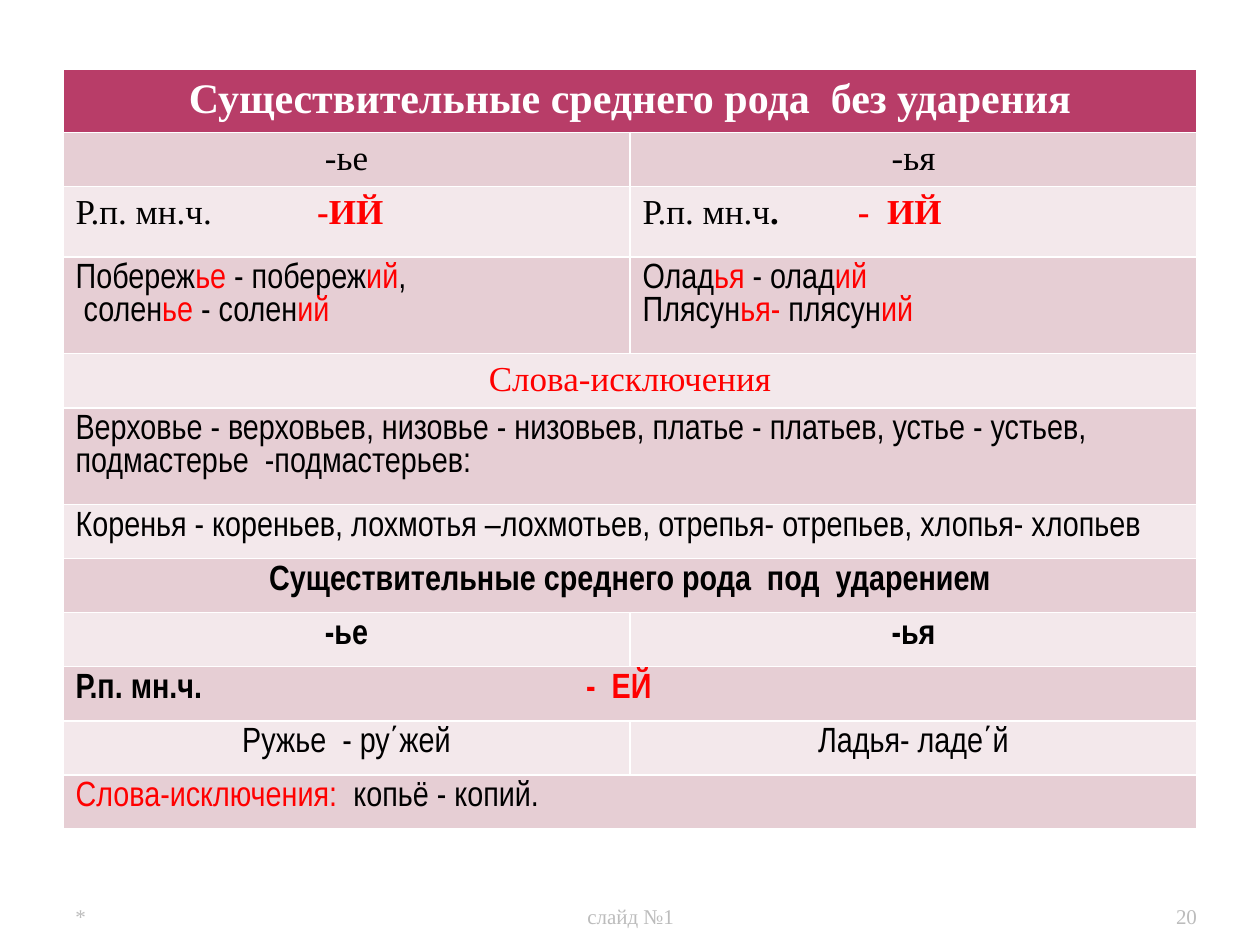
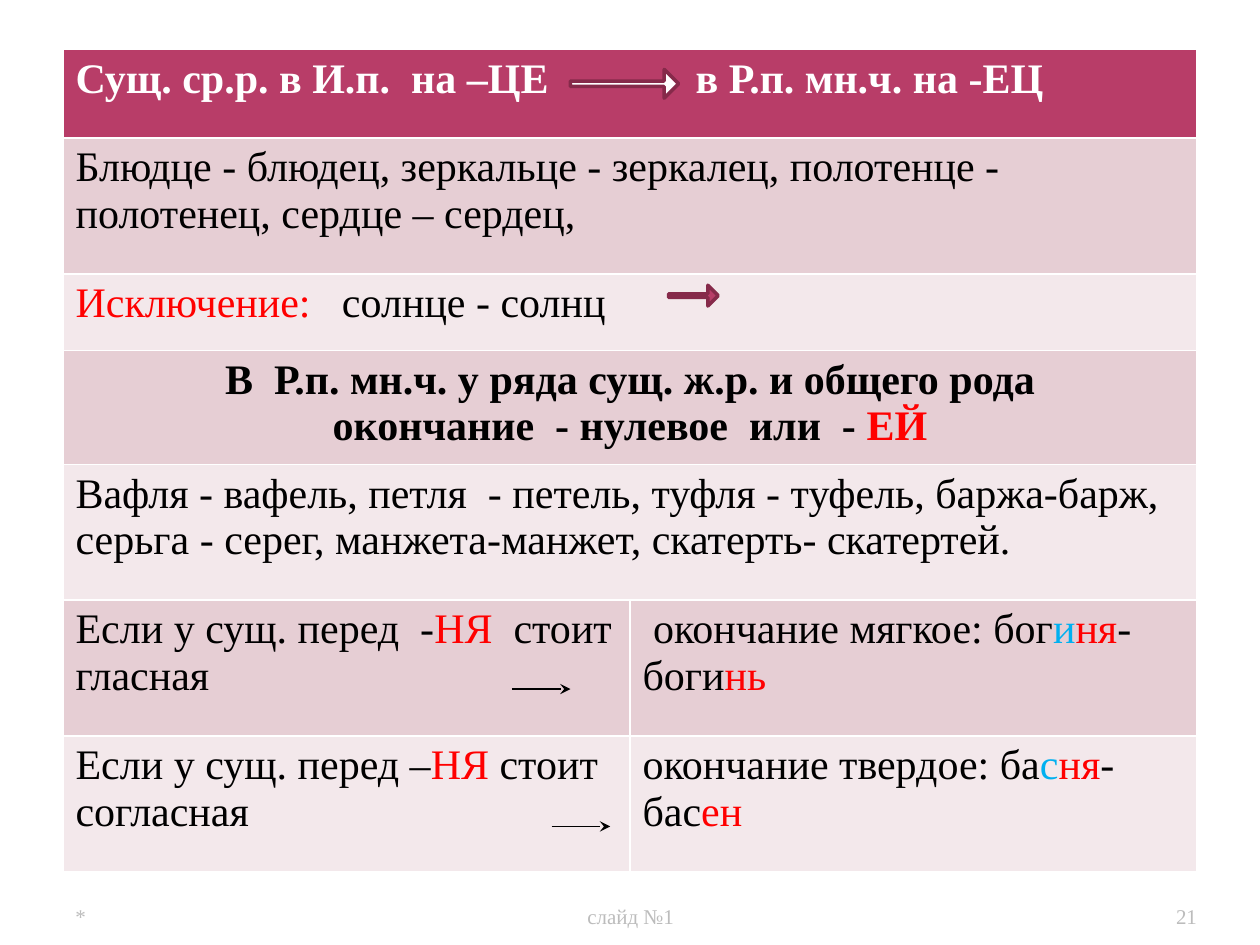
"""Build two slides of tables on Russian genitive plural endings."""
from dataclasses import dataclass

import pptx
import pptx.dml.color
import pptx.enum.shapes
import pptx.enum.text
import pptx.util
from lxml import etree
from pptx.oxml.ns import qn

Cm = pptx.util.Cm
Pt = pptx.util.Pt
RGBColor = pptx.dml.color.RGBColor
ALIGN = pptx.enum.text.PP_ALIGN

WHITE = RGBColor(0xFF, 0xFF, 0xFF)
BLACK = RGBColor(0, 0, 0)
RED = RGBColor(0xFF, 0, 0)
BLUE = RGBColor(0, 0xB0, 0xF0)
BERRY = RGBColor(0xB8, 0x3D, 0x68)
DARK_BERRY = RGBColor(0x86, 0x2A, 0x4A)
ROSE = RGBColor(0xE6, 0xCE, 0xD4)
PALE_ROSE = RGBColor(0xF3, 0xE8, 0xEB)
GRAY = RGBColor(0xBC, 0xBC, 0xBC)

SERIF = "Times New Roman"
NARROW = "Arial Narrow"
MARGIN = 1.27
COLUMN_WIDTH = 11.43

MARKS = {"*": (RED, False), "!": (RED, True), "~": (BLUE, False), "+": (BLACK, True)}


@dataclass
class Row:
    """Hold one table row; a lone cell spans both columns, and | splits marked spans."""
    height: float
    cells: tuple
    font: str = SERIF
    bold: bool = False
    align: int = ALIGN.LEFT
    tabs: tuple = ()


NEUTER_ROWS = [
    Row(1.27, ("Существительные среднего рода  без ударения",), bold=True, align=ALIGN.CENTER),
    Row(1.09, ("-ье", "-ья"), align=ALIGN.CENTER),
    Row(1.42, ("Р.п. мн.ч.\t|!-ИЙ", "Р.п. мн.ч|+.\t|!-  ИЙ"), tabs=(4.87, 4.34)),
    Row(1.95, ("Побереж|*ье| - побереж|*ий|,\n солен|*ье| - солен|*ий",
               "Олад|*ья |- олад|*ий\nПлясун|*ья-| плясун|*ий"), NARROW),
    Row(1.09, ("*Слова-исключения",), align=ALIGN.CENTER),
    Row(1.95, ("Верховье - верховьев, низовье - низовьев, платье - платьев, "
               "устье - устьев, подмастерье  -подмастерьев:",), NARROW),
    Row(1.09, ("Коренья - кореньев, лохмотья –лохмотьев, отрепья- отрепьев, "
               "хлопья- хлопьев",), NARROW),
    Row(1.09, ("Существительные среднего рода  под  ударением",), NARROW, True, ALIGN.CENTER),
    Row(1.09, ("-ье", "-ья"), NARROW, True, ALIGN.CENTER),
    Row(1.09, ("Р.п. мн.ч.\t|!-  ЕЙ",), NARROW, True, tabs=(10.29,)),
    Row(1.09, ("Ружье  - ру΄жей", "Ладья- ладе΄й"), NARROW, align=ALIGN.CENTER),
    Row(1.09, ("*Слова-исключения:|  копьё - копий.",), NARROW),
]

ENDING_ROWS = [
    Row(1.78, ("Сущ. ср.р. в И.п.  на –ЦЕ\tв Р.п. мн.ч. на -ЕЦ",), bold=True, tabs=(12.5,)),
    Row(2.74, ("Блюдце - блюдец, зеркальце - зеркалец, полотенце - полотенец, "
               "сердце – сердец,",)),
    Row(1.55, ("*Исключение:\t|солнце - солнц",), tabs=(5.37,)),
    Row(2.29, ("В  Р.п. мн.ч. у ряда сущ. ж.р. и общего рода\n"
               "окончание  - нулевое  или  - |!ЕЙ",), bold=True, align=ALIGN.CENTER),
    Row(2.74, ("Вафля - вафель, петля  - петель, туфля - туфель, баржа-барж, "
               "серьга - серег, манжета-манжет, скатерть- скатертей.",)),
    Row(2.74, ("Если у сущ. перед  -|*НЯ|  стоит гласная",
               " окончание мягкое: бог|~и|*ня|-боги|*нь")),
    Row(2.74, ("Если у сущ. перед –|*НЯ| стоит согласная",
               "окончание твердое: ба|~с|*ня|-бас|*ен")),
]


def format_span(span, font, size, color, bold=False):
    """Apply typeface, size, colour and weight to a run."""
    span.font.name = font
    span.font.size = Pt(size)
    span.font.color.rgb = color
    span.font.bold = bold


def add_tab_stop(para, position):
    """Add one left tab stop, in centimetres."""
    stops = etree.SubElement(para._p.get_or_add_pPr(), qn("a:tabLst"))
    etree.SubElement(stops, qn("a:tab"), pos=str(Cm(position)), algn="l")


def fill_cell(cell, text, row, index, size, color):
    """Write marked-up text into a table cell."""
    for number, line in enumerate(text.split("\n")):
        frame = cell.text_frame
        para = frame.add_paragraph() if number else frame.paragraphs[0]
        para.alignment = row.align
        if row.tabs:
            add_tab_stop(para, row.tabs[index])
        for piece in line.split("|"):
            mark = MARKS.get(piece[0])
            span = para.add_run()
            span.text = piece[1:] if mark else piece
            span_color, strong = mark or (color, False)
            format_span(span, row.font, size, span_color, row.bold or strong)


def add_rule_table(page, top, rows, size):
    """Add a two-column banded table whose first row is the heading."""
    height = sum(row.height for row in rows)
    table = page.shapes.add_table(len(rows), 2, Cm(MARGIN), Cm(top),
                                  Cm(2 * COLUMN_WIDTH), Cm(height)).table
    for column in table.columns:
        column.width = Cm(COLUMN_WIDTH)
    for number, row in enumerate(rows):
        table.rows[number].height = Cm(row.height)
        band = BERRY if number == 0 else (PALE_ROSE, ROSE)[number % 2]
        for index in range(2):
            cell = table.cell(number, index)
            cell.fill.solid()
            cell.fill.fore_color.rgb = band
        if len(row.cells) == 1:
            table.cell(number, 0).merge(table.cell(number, 1))
        for index, text in enumerate(row.cells):
            fill_cell(table.cell(number, index), text, row, index,
                      size if number else 24, BLACK if number else WHITE)


def add_footer_text(page, text, left, width, align, inset=0.25):
    """Add one small gray text at the foot of the page."""
    box = page.shapes.add_textbox(Cm(left), Cm(17.83), Cm(width), Cm(1.02))
    frame = box.text_frame
    frame.word_wrap = True
    frame.vertical_anchor = pptx.enum.text.MSO_ANCHOR.BOTTOM
    frame.margin_left = frame.margin_right = Cm(inset)
    frame.text = text
    para = frame.paragraphs[0]
    para.alignment = align
    format_span(para.runs[0], SERIF, 12, GRAY)


def add_footer(page, number):
    """Add the date mark, footer and page number."""
    add_footer_text(page, "*", MARGIN, 5.92, ALIGN.LEFT)
    add_footer_text(page, "слайд №1", 8.69, 8.05, ALIGN.CENTER)
    add_footer_text(page, str(number), 22.02, 2.11, ALIGN.RIGHT, 0)


def add_block_arrow(page, left, top, width, height, thickness, color):
    """Add an outlined right arrow."""
    arrow = page.shapes.add_shape(pptx.enum.shapes.MSO_SHAPE.RIGHT_ARROW,
                                  Cm(left), Cm(top), Cm(width), Cm(height))
    arrow.adjustments[0] = thickness
    arrow.adjustments[1] = 0.5
    arrow.shadow.inherit = False
    arrow.fill.solid()
    arrow.fill.fore_color.rgb = color
    arrow.line.color.rgb = DARK_BERRY
    arrow.line.width = Pt(2)


def add_line_arrow(page, left, top, length):
    """Add a thin horizontal line with a stealth head."""
    arrow = page.shapes.add_connector(pptx.enum.shapes.MSO_CONNECTOR.STRAIGHT,
                                      Cm(left), Cm(top), Cm(left + length), Cm(top))
    arrow.line.color.rgb = BLACK
    arrow.line.width = Pt(0.75)
    etree.SubElement(arrow.line._get_or_add_ln(), qn("a:tailEnd"), type="stealth")
    etree.SubElement(arrow._element.spPr, qn("a:effectLst"))


def add_page(deck, number, top, rows, size):
    """Add a page with its table and footer."""
    page = deck.slides.add_slide(deck.slide_layouts[6])
    add_rule_table(page, top, rows, size)
    add_footer(page, number)
    return page


def main():
    """Build and save the deck."""
    deck = pptx.Presentation()
    deck.slide_width, deck.slide_height = Cm(25.4), Cm(19.05)
    add_page(deck, 20, 1.4, NEUTER_ROWS, 20)
    page = add_page(deck, 21, 1, ENDING_ROWS, 24)
    add_block_arrow(page, 11.5, 1.4, 2.18, 0.58, 0.187, WHITE)
    add_block_arrow(page, 13.48, 5.75, 1, 0.42, 0.173, BERRY)
    add_line_arrow(page, 10.32, 13.89, 1.18)
    add_line_arrow(page, 11.12, 16.66, 1.18)
    deck.save("out.pptx")


if __name__ == "__main__":
    main()
